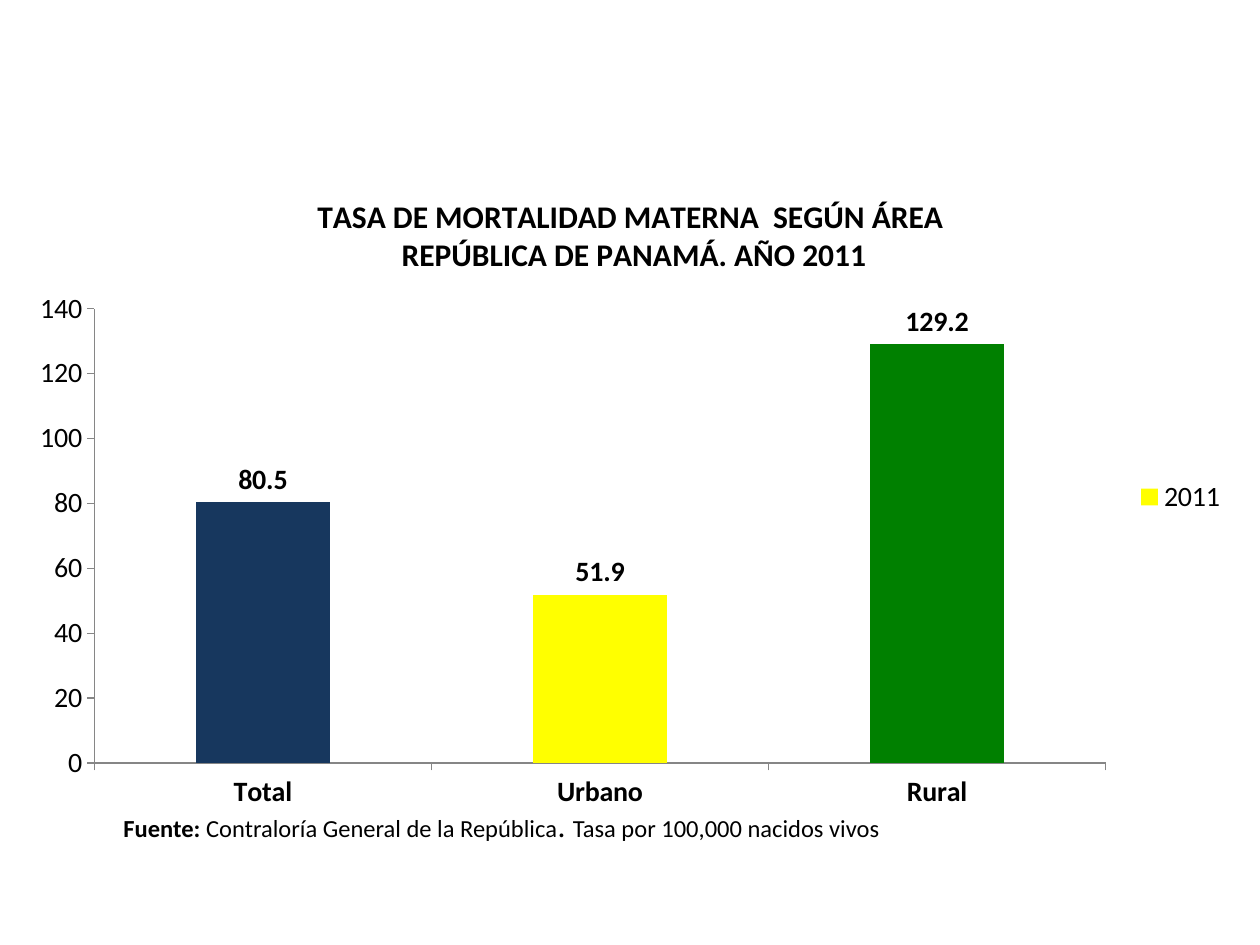
from dataclasses import dataclass

from lxml import etree
from pptx import Presentation
from pptx.chart.data import CategoryChartData
from pptx.dml.color import RGBColor
from pptx.enum.chart import XL_CHART_TYPE, XL_LABEL_POSITION, XL_LEGEND_POSITION, XL_TICK_MARK
from pptx.oxml.ns import qn
from pptx.util import Cm, Pt

COLUMNS = XL_CHART_TYPE.COLUMN_CLUSTERED
LABEL_OUTSIDE = XL_LABEL_POSITION.OUTSIDE_END
LEGEND_RIGHT = XL_LEGEND_POSITION.RIGHT
TICK_OUTSIDE = XL_TICK_MARK.OUTSIDE
TICK_NONE = XL_TICK_MARK.NONE
FONT = "Calibri"
COLORS = {
    "text": "000000",
    "axis": "868686",
    "total": "17375E",
    "urban": "FFFF00",
    "rural": "008000",
}


@dataclass
class Area:
    name: str
    rate: float
    color: str


@dataclass
class Words:
    text: str
    size: int
    bold: bool = False


AREAS = [
    Area("Total", 80.5, "total"),
    Area("Urbano", 51.9, "urban"),
    Area("Rural", 129.2, "rural"),
]
TITLE_LINES = [
    "TASA DE MORTALIDAD MATERNA  SEGÚN ÁREA",
    " REPÚBLICA DE PANAMÁ. AÑO 2011",
]
SOURCE_NOTE = [
    Words("Fuente: ", 14, True),
    Words("Contraloría General de la República", 14),
    Words(". ", 18),
    Words("Tasa por 100,000 nacidos vivos", 14),
]
PLOT_LAYOUT = {"x": 0.06, "y": 0.21, "w": 0.83, "h": 0.7}


def color(name: str) -> RGBColor:
    return RGBColor.from_string(COLORS[name])


def style_font(font, size: int, bold: bool = False) -> None:
    font.name = FONT
    font.size = Pt(size)
    font.bold = bold
    font.color.rgb = color("text")


def add_words(para, words: Words) -> None:
    span = para.add_run()
    span.text = words.text
    style_font(span.font, words.size, words.bold)


def place_plot(chart) -> None:
    plot_area = chart.plots[0]._element.getparent()
    for old in plot_area.findall(qn("c:layout")):
        plot_area.remove(old)
    layout = etree.Element(qn("c:layout"))
    manual = etree.SubElement(layout, qn("c:manualLayout"))
    settings = {"layoutTarget": "inner", "xMode": "edge", "yMode": "edge", **PLOT_LAYOUT}
    for tag, value in settings.items():
        etree.SubElement(manual, qn(f"c:{tag}")).set("val", str(value))
    plot_area.insert(0, layout)


def style_axis(axis, bold: bool) -> None:
    axis.has_major_gridlines = False
    axis.major_tick_mark = TICK_OUTSIDE
    axis.minor_tick_mark = TICK_NONE
    axis.format.line.color.rgb = color("axis")
    axis.format.line.width = Pt(0.75)
    style_font(axis.tick_labels.font, 16, bold)


def add_rate_chart(page) -> None:
    data = CategoryChartData()
    data.categories = [area.name for area in AREAS]
    data.add_series("2011", [area.rate for area in AREAS])
    frame = page.shapes.add_chart(COLUMNS, Cm(0.43), Cm(3.48), Cm(24.56), Cm(13.08), data)
    chart = frame.chart
    style_font(chart.font, 16)

    title = chart.chart_title.text_frame
    for number, line in enumerate(TITLE_LINES):
        para = title.add_paragraph() if number else title.paragraphs[0]
        add_words(para, Words(line, 18, True))

    chart.has_legend = True
    chart.legend.position = LEGEND_RIGHT
    chart.legend.include_in_layout = False
    style_font(chart.legend.font, 16)

    style_axis(chart.category_axis, True)
    style_axis(chart.value_axis, False)
    chart.value_axis.minimum_scale = 0
    chart.value_axis.maximum_scale = 140
    chart.value_axis.major_unit = 20

    plot = chart.plots[0]
    plot.gap_width = 150
    plot.vary_by_categories = False
    series = plot.series[0]
    series.format.fill.solid()
    series.format.fill.fore_color.rgb = color("urban")
    for number, area in enumerate(AREAS):
        fill = series.points[number].format.fill
        fill.solid()
        fill.fore_color.rgb = color(area.color)
    labels = series.data_labels
    labels.show_value = True
    labels.position = LABEL_OUTSIDE
    style_font(labels.font, 16, True)
    place_plot(chart)


def add_source_note(page) -> None:
    box = page.shapes.add_textbox(Cm(2.24), Cm(16.13), Cm(15.88), Cm(0.84))
    box.text_frame.word_wrap = True
    for words in SOURCE_NOTE:
        add_words(box.text_frame.paragraphs[0], words)


def main() -> None:
    deck = Presentation()
    deck.slide_width = Cm(25.4)
    deck.slide_height = Cm(19.05)
    page = deck.slides.add_slide(deck.slide_layouts[6])
    add_rate_chart(page)
    add_source_note(page)
    deck.save("out.pptx")


if __name__ == "__main__":
    main()
